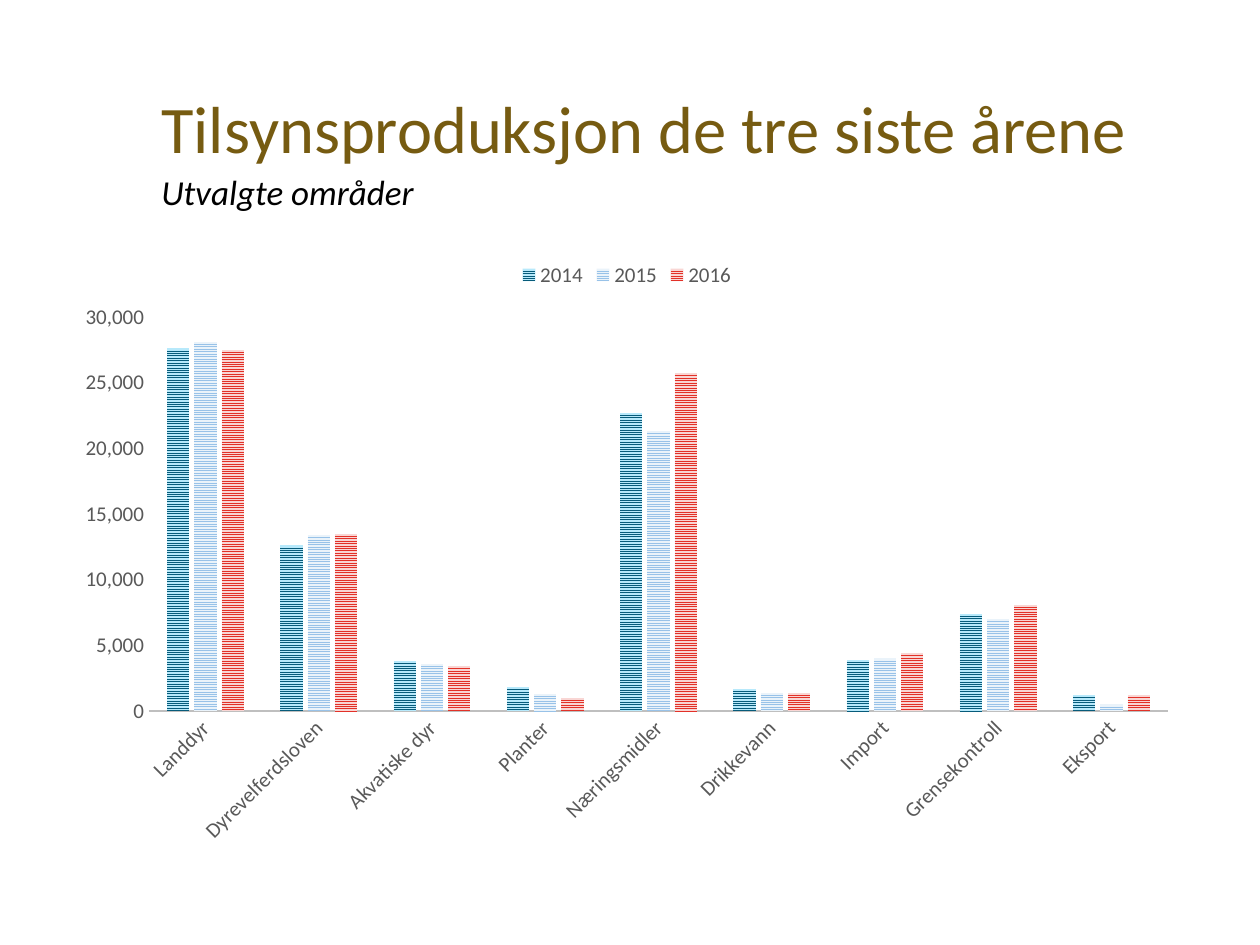
"""Build a slide with a clustered column chart of inspection output per area."""
import pptx
import pptx.chart.data
import pptx.dml.color
import pptx.enum.chart
import pptx.enum.dml
import pptx.enum.text
import pptx.util
from pptx.util import Inches

COLORS = {"title": "765B11", "text": "000000", "label": "595959", "axis": "BFBFBF"}
FONT = "Calibri"
AREAS = ["Landdyr", "Dyrevelferdsloven", "Akvatiske dyr", "Planter", "Næringsmidler",
         "Drikkevann", "Import", "Grensekontroll", "Eksport"]
YEARS = {
    "2014": ([27600, 12600, 3800, 1800, 22700, 1700, 3900, 7400, 1200], "075B7A", "B7E9FB"),
    "2015": ([28100, 13400, 3600, 1300, 21300, 1400, 4000, 7000, 500], "98C2E8", "EAF3FA"),
    "2016": ([27500, 13500, 3400, 1000, 25700, 1400, 4400, 8100, 1200], "E23128", "F9D6D4"),
}


def rgb(value):
    return pptx.dml.color.RGBColor.from_string(value)


class SlideBuilder:
    def __init__(self, page):
        self.page = page

    def style(self, font, size, color):
        font.name = FONT
        font.size = pptx.util.Pt(size)
        font.color.rgb = rgb(COLORS[color])

    def text(self, words, place, size, color, anchor, italic=None):
        box = self.page.shapes.add_textbox(*map(Inches, place))
        frame = box.text_frame
        frame.word_wrap = True
        frame.vertical_anchor = anchor
        frame.margin_left = frame.margin_right = frame.margin_top = frame.margin_bottom = 0
        para = frame.paragraphs[0]
        para.line_spacing = 0.9
        span = para.add_run()
        span.text = words
        self.style(span.font, size, color)
        span.font.italic = italic

    def column_chart(self, categories, series, place):
        data = pptx.chart.data.CategoryChartData(number_format="#,##0")
        data.categories = categories
        for name, (values, _, _) in series.items():
            data.add_series(name, values)
        kind = pptx.enum.chart.XL_CHART_TYPE.COLUMN_CLUSTERED
        chart = self.page.shapes.add_chart(kind, *map(Inches, place), data).chart
        chart.has_title = False
        self.style(chart.font, 10, "text")

        plot = chart.plots[0]
        plot.gap_width = 164
        plot.overlap = -22
        plot.vary_by_categories = False
        for column, (_, dark, light) in zip(plot.series, series.values()):
            fill = column.format.fill
            fill.patterned()
            fill.pattern = pptx.enum.dml.MSO_PATTERN.NARROW_HORIZONTAL
            fill.fore_color.rgb = rgb(dark)
            fill.back_color.rgb = rgb(light)
            column.invert_if_negative = False

        chart.has_legend = True
        chart.legend.position = pptx.enum.chart.XL_LEGEND_POSITION.TOP
        chart.legend.include_in_layout = False
        self.style(chart.legend.font, 12, "label")

        for axis in (chart.category_axis, chart.value_axis):
            axis.has_major_gridlines = False
            axis.major_tick_mark = axis.minor_tick_mark = pptx.enum.chart.XL_TICK_MARK.NONE
            self.style(axis.tick_labels.font, 12, "label")
        line = chart.category_axis.format.line
        line.color.rgb = rgb(COLORS["axis"])
        line.width = pptx.util.Pt(1.5)
        body = chart.category_axis._element.find(".//" + pptx.oxml.ns.qn("a:bodyPr"))
        body.set("rot", "-2700000")
        body.set("vert", "horz")
        chart.value_axis.format.line.fill.background()
        chart.value_axis.tick_labels.number_format = "#,##0"
        chart.value_axis.tick_labels.number_format_is_linked = False


def main():
    deck = pptx.Presentation()
    deck.slide_width, deck.slide_height = Inches(10), Inches(7.5)
    builder = SlideBuilder(deck.slides.add_slide(deck.slide_layouts[6]))
    anchors = pptx.enum.text.MSO_ANCHOR
    builder.text("Tilsynsproduksjon de tre siste årene", (1.28, 0.19, 7.88, 1.14),
                 38, "title", anchors.BOTTOM)
    builder.column_chart(AREAS, YEARS, (0.5, 1.97, 8.95, 4.82))
    builder.text("Utvalgte områder", (1.28, 1.39, 7.88, 0.72),
                 20, "text", anchors.TOP, italic=True)
    deck.save("out.pptx")


if __name__ == "__main__":
    main()
